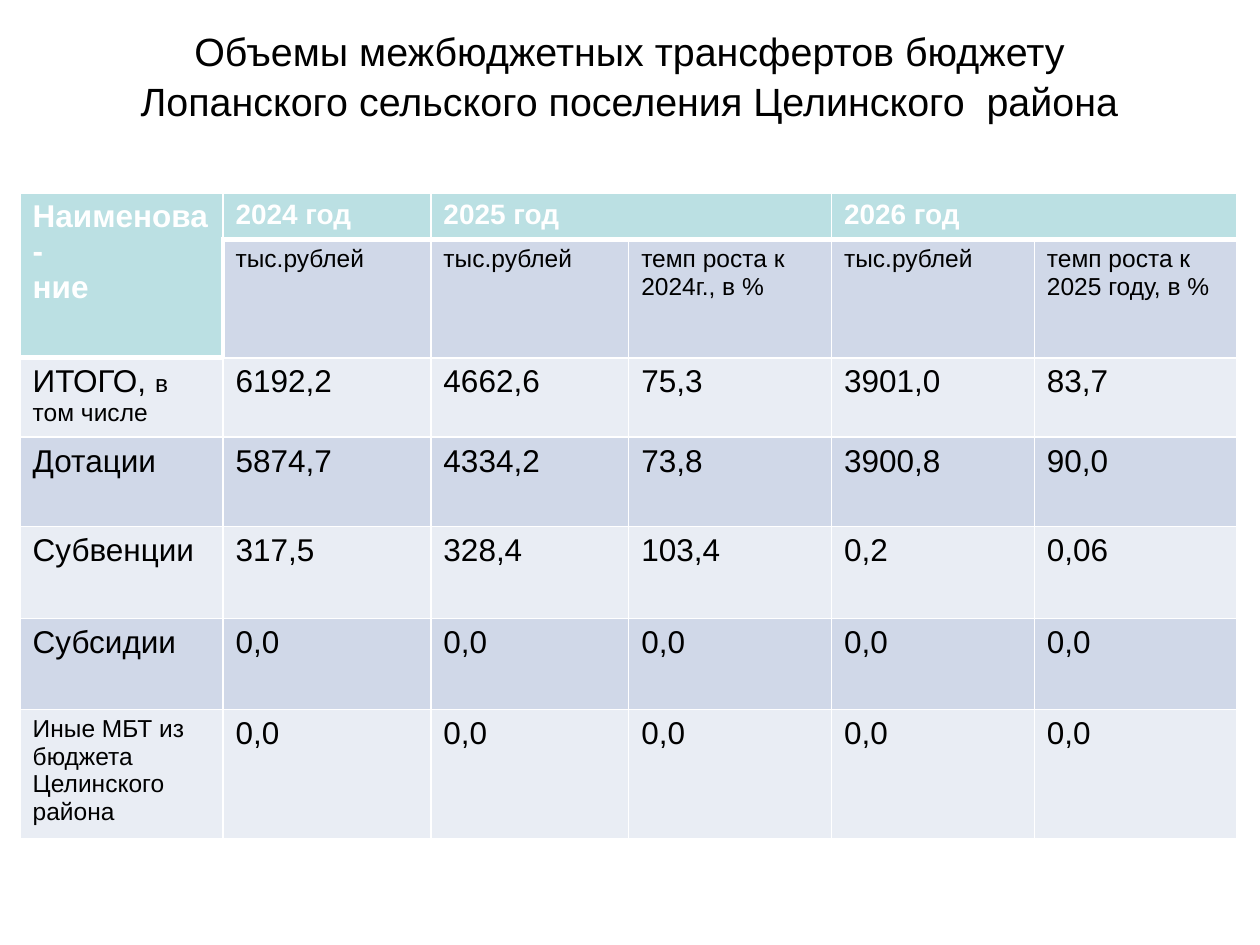
from dataclasses import dataclass

from lxml.etree import SubElement
from pptx import Presentation
from pptx.dml.color import RGBColor
from pptx.enum.text import MSO_ANCHOR, MSO_AUTO_SIZE, PP_ALIGN
from pptx.oxml.ns import qn
from pptx.util import Inches, Pt


@dataclass(frozen=True)
class Theme:
    font: str = "Arial"
    black: str = "000000"
    white: str = "FFFFFF"
    header: str = "BBE0E3"
    dark_band: str = "D0D8E8"
    light_band: str = "E9EDF4"
    title: float = 22.5
    body: float = 18
    year: float = 16
    small: float = 14
    thin: float = 1
    thick: float = 3


THEME = Theme()

TITLE = "Объемы межбюджетных трансфертов бюджету Лопанского сельского поселения Целинского  района"
COLUMN_WIDTHS = [1.61, 1.65, 1.57, 1.61, 1.61, 1.61]
ROW_HEIGHTS = [0.37, 0.8, 0.63, 0.71, 0.73, 0.72, 1.03]
YEARS = {1: "2024 год", 2: "2025 год", 4: "2026 год"}
MEASURES = ["тыс.рублей", "тыс.рублей", "темп роста к 2024г., в %",
            "тыс.рублей", "темп роста к 2025 году, в %"]
# Each row: label runs as (text, size), then the values
TRANSFERS = [
    ([("ИТОГО, ", THEME.body), ("в том числе", THEME.small)],
     ["6192,2", "4662,6", "75,3", "3901,0", "83,7"]),
    ([("Дотации", THEME.body)], ["5874,7", "4334,2", "73,8", "3900,8", "90,0"]),
    ([("Субвенции", THEME.body)], ["317,5", "328,4", "103,4", "0,2", "0,06"]),
    ([("Субсидии", THEME.body)], ["0,0"] * 5),
    ([("Иные МБТ из бюджета Целинского района", THEME.small)], ["0,0"] * 5),
]


def add_run(p, text, size, color=THEME.black, bold=False):
    r = p.add_run()
    r.text = text
    r.font.name = THEME.font
    r.font.size = Pt(size)
    r.font.bold = bold
    r.font.color.rgb = RGBColor.from_string(color)


def add_title(slide):
    title = slide.shapes.title
    title.left, title.top = Inches(0.75), Inches(0.16)
    title.width, title.height = Inches(8.5), Inches(0.86)
    tf = title.text_frame
    tf.word_wrap = True
    tf.auto_size = MSO_AUTO_SIZE.NONE
    tf.vertical_anchor = MSO_ANCHOR.MIDDLE
    p = tf.paragraphs[0]
    p.alignment = PP_ALIGN.CENTER
    p.line_spacing = 1.06
    add_run(p, TITLE, THEME.title)


def set_borders(cell, thick_sides):
    tc_pr = cell._tc.get_or_add_tcPr()
    for side in "LRTB":
        width = THEME.thick if side in thick_sides else THEME.thin
        line = SubElement(tc_pr, qn(f"a:ln{side}"), w=str(Pt(width)))
        fill = SubElement(line, qn("a:solidFill"))
        SubElement(fill, qn("a:srgbClr"), val=THEME.white)


def thick_sides(row, col):
    """Sides that border the header area."""
    if row == 0:
        return "B"
    if row == 1:
        return "B" if col == 0 else "LT" if col == 1 else "T"
    return "T" if row == 2 and col == 0 else ""


def cell_fill(row, col):
    if row == 0 or (row == 1 and col == 0):
        return THEME.header
    return THEME.dark_band if row % 2 else THEME.light_band


def style_grid(table):
    table.first_row = table.horz_banding = False
    for column, width in zip(table.columns, COLUMN_WIDTHS):
        column.width = Inches(width)
    for r, height in enumerate(ROW_HEIGHTS):
        table.rows[r].height = Inches(height)
        for c in range(len(COLUMN_WIDTHS)):
            cell = table.cell(r, c)
            set_borders(cell, thick_sides(r, c))
            cell.fill.solid()
            cell.fill.fore_color.rgb = RGBColor.from_string(cell_fill(r, c))


def write_cell(table, row, col, runs, **style):
    p = table.cell(row, col).text_frame.paragraphs[0]
    for text, size in runs:
        add_run(p, text, size, **style)


def fill_header(table):
    white_bold = {"color": THEME.white, "bold": True}
    write_cell(table, 0, 0, [("Наименова-", THEME.body)], **white_bold)
    p = table.cell(0, 0).text_frame.add_paragraph()
    add_run(p, "ние", THEME.body, **white_bold)
    for col, year in YEARS.items():
        write_cell(table, 0, col, [(year, THEME.year)], **white_bold)
    for col, measure in enumerate(MEASURES, 1):
        write_cell(table, 1, col, [(measure, THEME.small)])
    table.cell(0, 0).merge(table.cell(1, 0))
    for col in (2, 4):
        table.cell(0, col).merge(table.cell(0, col + 1))


def add_transfers_table(slide):
    table = slide.shapes.add_table(
        len(ROW_HEIGHTS), len(COLUMN_WIDTHS), Inches(0.16), Inches(1.53),
        Inches(sum(COLUMN_WIDTHS)), Inches(sum(ROW_HEIGHTS))).table
    style_grid(table)
    fill_header(table)
    for row, (label, values) in enumerate(TRANSFERS, 2):
        write_cell(table, row, 0, label)
        for col, value in enumerate(values, 1):
            write_cell(table, row, col, [(value, THEME.body)])


def main():
    prs = Presentation()
    prs.slide_width, prs.slide_height = Inches(10), Inches(7.5)
    s = prs.slides.add_slide(prs.slide_layouts[5])
    add_title(s)
    add_transfers_table(s)
    prs.save("out.pptx")


if __name__ == "__main__":
    main()
